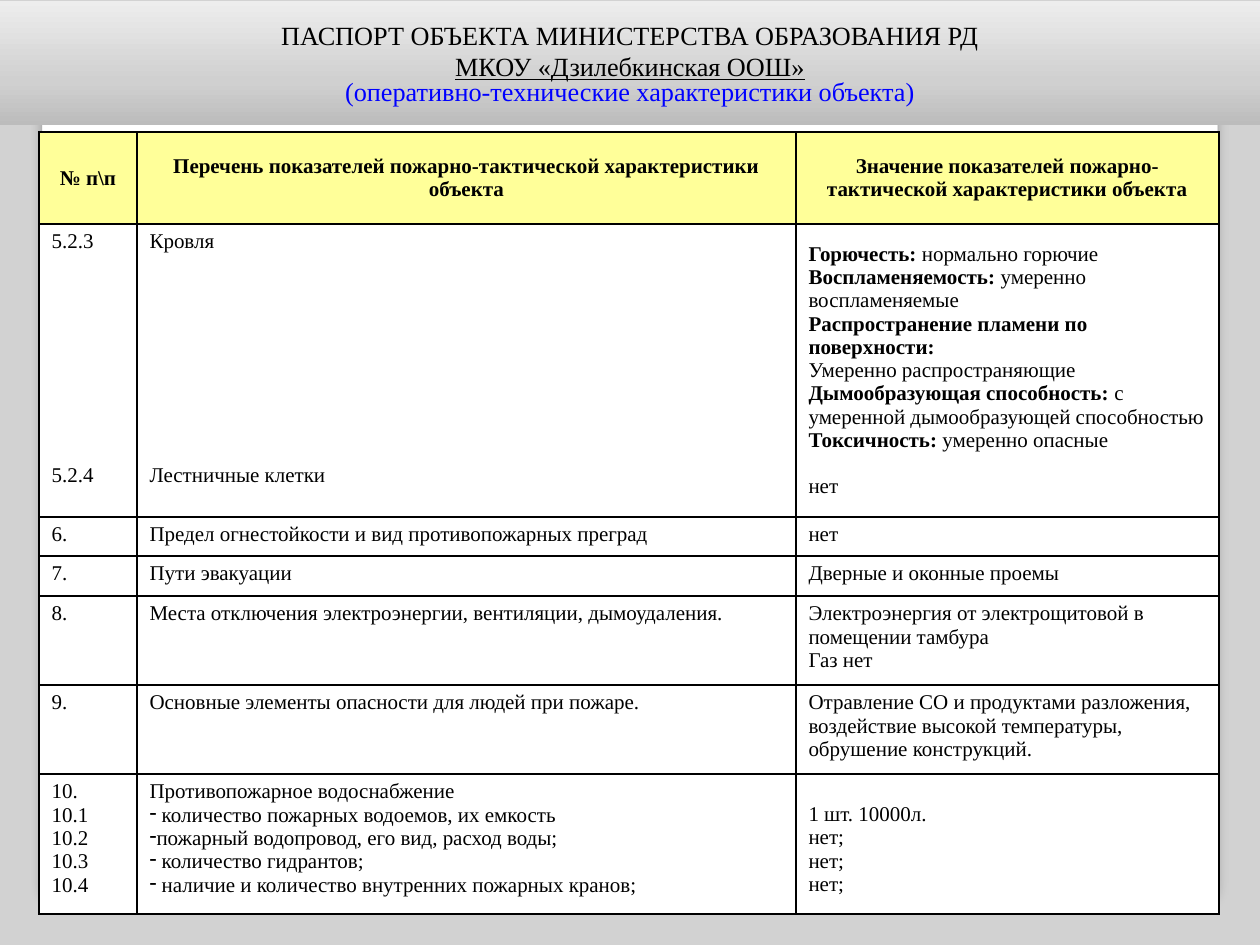
import pptx
import pptx.util
import pptx.dml.color
import pptx.enum.shapes
import pptx.enum.text
import pptx.oxml
import pptx.oxml.ns

FONT = "Times New Roman"
PX = 914400 // 126
LINE = 23

TITLE = [
    ("ПАСПОРТ ОБЪЕКТА МИНИСТЕРСТВА ОБРАЗОВАНИЯ РД", "000000", False, 1.0),
    ("МКОУ «Дзилебкинская ООШ»", "000000", True, 1.0),
    ("(оперативно-технические характеристики объекта)", "0000FF", False, 0.8),
]
HEAD = [
    "№ п\\п",
    "Перечень показателей пожарно-тактической характеристики объекта",
    "Значение показателей пожарно-тактической характеристики объекта",
]
ROOF = [
    ("Горючесть:", " нормально горючие"),
    ("Воспламеняемость: ", "умеренно воспламеняемые"),
    ("Распространение пламени по поверхности:", ""),
    ("", "Умеренно распространяющие"),
    ("Дымообразующая способность: ", "с умеренной дымообразующей способностью"),
    ("Токсичность:", " умеренно опасные"),
    "нет",
]
ROWS = [
    [["5.2.3", "5.2.4"], ["Кровля", "Лестничные клетки"], ROOF],
    [["6."], ["Предел огнестойкости и вид противопожарных преград"], ["нет"]],
    [["7."], ["Пути эвакуации"], ["Дверные и оконные проемы"]],
    [["8."], ["Места отключения электроэнергии, вентиляции, дымоудаления."],
     ["Электроэнергия от электрощитовой в помещении тамбура", "Газ нет"]],
    [["9."], ["Основные элементы опасности для людей при пожаре."],
     ["Отравление СО и продуктами разложения, воздействие высокой температуры, "
      "обрушение конструкций."]],
    [["10.", "10.1", "10.2", "10.3", "10.4"],
     ["Противопожарное водоснабжение",
      "- количество пожарных водоемов, их емкость",
      "-пожарный водопровод, его вид, расход воды;",
      "- количество гидрантов;",
      "- наличие и количество внутренних пожарных кранов;"],
     ["1 шт. 10000л.", "нет;", "нет;", "нет;"]],
]
GAPS = {"5.2.4": 9 * LINE + 3, "Лестничные клетки": 9 * LINE + 3}
WIDE = [98, 659, 423]
HIGH = [92, 293, 39, 40, 89, 89, 140]
PANEL = [(0, "FFFFFF"), (98, "FFFFFF"), (99, "F7F7F7"), (100, "DADADA")]
BAND = [(0, "BCBCBC"), (35, "D0D0D0"), (100, "EDEDED")]

ALIGN = pptx.enum.text.PP_ALIGN
MID = pptx.enum.text.MSO_ANCHOR.MIDDLE
KIND = pptx.enum.shapes.MSO_SHAPE
qn = pptx.oxml.ns.qn


def px(n):
    return pptx.util.Emu(n * PX)


def color(code):
    return pptx.dml.color.RGBColor.from_string(code)


def node(text):
    tag, rest = text[1:].split(" ", 1)
    return pptx.oxml.parse_xml(f"<{tag} {pptx.oxml.ns.nsdecls('a')} {rest}")


def block(slide, kind, box, stops, angle):
    shape = slide.shapes.add_shape(kind, *map(px, box))
    shape.shadow.inherit = False
    shape.fill.gradient()
    shape.fill.gradient_angle = angle
    items = shape._element.spPr.find(qn("a:gradFill")).find(qn("a:gsLst"))
    for item in list(items):
        items.remove(item)
    for pos, code in stops:
        items.append(node(f'<a:gs pos="{pos * 1000}"><a:srgbClr val="{code}"/></a:gs>'))
    return shape


def style(para, size, code):
    para.font.name = FONT
    para.font.size = pptx.util.Pt(size)
    para.font.color.rgb = color(code)


def paras(frame, lines):
    for i, line in enumerate(lines):
        yield frame.paragraphs[0] if i == 0 else frame.add_paragraph(), line


def write(para, line):
    style(para, 12, "000000")
    if isinstance(line, tuple):
        for text, bold in zip(line, (True, False)):
            if text:
                run = para.add_run()
                run.text, run.font.bold = text, bold
        return
    if line in GAPS:
        para.space_before = px(GAPS[line])
    if line.startswith("-"):
        line = line[1:]
        props = para._p.get_or_add_pPr()
        props.set("marL", "0")
        props.set("indent", "0")
        props.insert_element_before(node('<a:buChar char="-"/>'), "a:tabLst", "a:defRPr")
    para.text = line


def border(cell):
    props = cell._tc.get_or_add_tcPr()
    for i, side in enumerate("LRTB"):
        props.insert(i, node(
            f'<a:ln{side} w="12700"><a:solidFill><a:srgbClr val="000000"/>'
            f'</a:solidFill></a:ln{side}>'))


def grid(slide):
    table = slide.shapes.add_table(
        len(HIGH), len(WIDE), px(39), px(132), px(sum(WIDE)), px(sum(HIGH))).table
    table.first_row = table.horz_banding = False
    for col, size in zip(table.columns, WIDE):
        col.width = px(size)
    for row, size in zip(table.rows, HIGH):
        row.height = px(size)
    for r, line in enumerate([[[text] for text in HEAD]] + ROWS):
        for c, lines in enumerate(line):
            cell = table.cell(r, c)
            cell.fill.solid()
            cell.fill.fore_color.rgb = color("FFFFFF" if r else "FFFF99")
            border(cell)
            for para, text in paras(cell.text_frame, lines):
                write(para, text)
                if r == 0:
                    para.font.bold = True
                    para.alignment = ALIGN.CENTER
            if r == 0 or lines is ROOF:
                cell.vertical_anchor = MID
            if lines is ROOF:
                para.space_before = px(LINE)
    table.cell(len(ROWS), 2).margin_top = px(6 + LINE)


def main():
    deck = pptx.Presentation()
    deck.slide_width, deck.slide_height = px(1260), px(945)
    slide = deck.slides.add_slide(deck.slide_layouts[6])
    slide.background.fill.solid()
    slide.background.fill.fore_color.rgb = color("D2D2D2")

    panel = block(slide, KIND.ROUNDED_RECTANGLE, (42, 45, 1176, 854), PANEL, 270)
    panel.adjustments[0] = 0.02
    panel.line.color.rgb = color("A4A4A4")
    panel.line.width = pptx.util.Pt(0.16)
    panel._element.spPr.find(qn("a:effectLst")).append(node(
        '<a:outerShdw blurRad="76200" dist="50800" dir="5400000">'
        '<a:srgbClr val="000000"><a:alpha val="25000"/></a:srgbClr></a:outerShdw>'))

    grid(slide)

    band = block(slide, KIND.RECTANGLE, (0, 1, 1260, 124), BAND, 90)
    band.line.fill.background()
    frame = band.text_frame
    frame.word_wrap = True
    frame.vertical_anchor = MID
    for para, (text, code, under, space) in paras(frame, TITLE):
        para.text = text
        style(para, 15, code)
        para.font.underline = under
        para.alignment = ALIGN.CENTER
        para.line_spacing = space
    deck.save("out.pptx")


if __name__ == "__main__":
    main()
